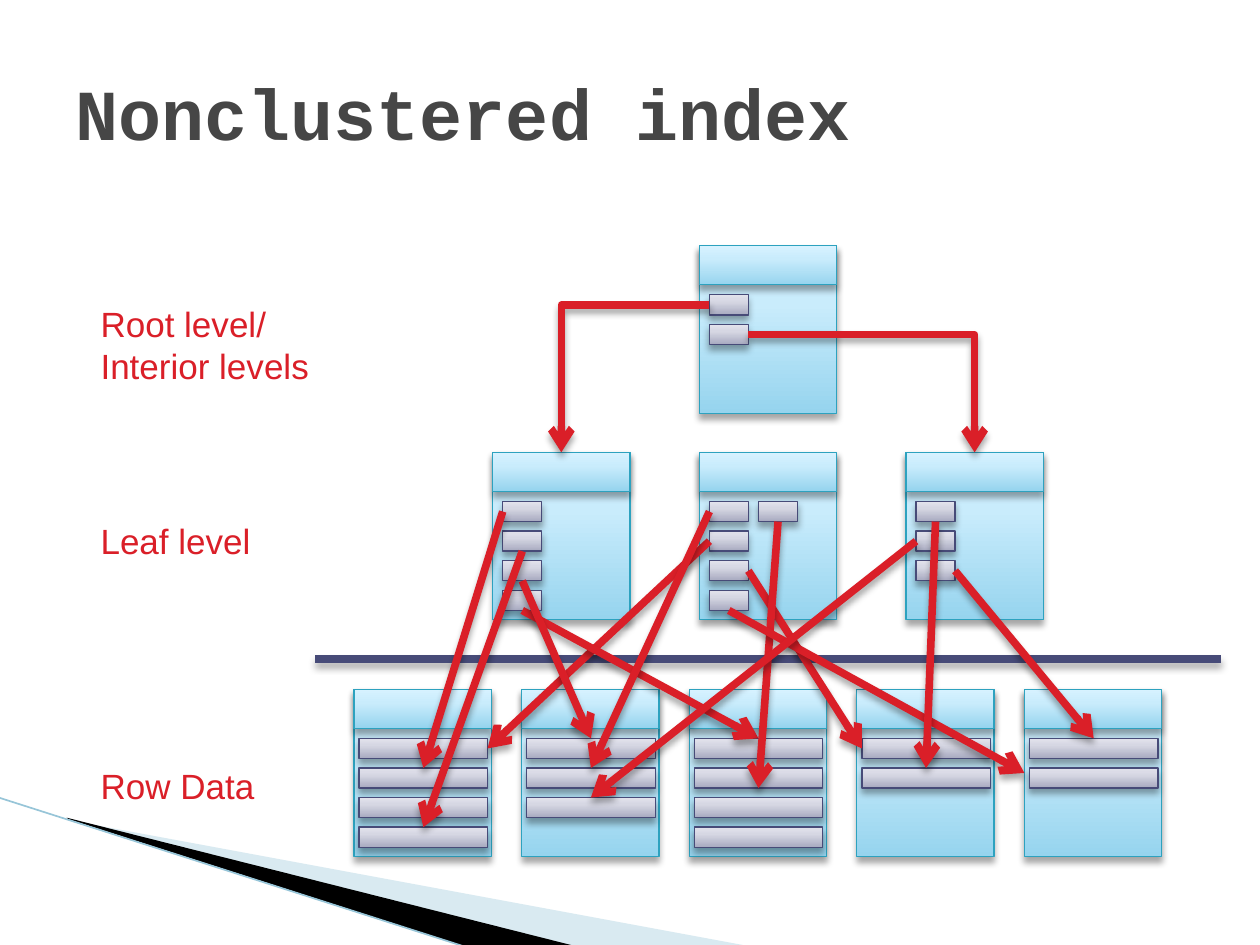
import copy

import pptx
import pptx.dml.color
import pptx.enum.shapes
import pptx.enum.text
import pptx.oxml
import pptx.oxml.ns
import pptx.util

COLORS = {
    "title": "464646", "red": "DA1F28", "navy": "474B78", "teal": "2DA2BF",
    "wedge": "A0CBDC", "black": "000000", "edge": "97C5D8",
}
PAGE_STOPS = [(0, "96D4EE"), (0.65, "C9ECFC"), (1, "D7F2FF")]
ENTRY_STOPS = [(0, "A8AAC0"), (0.65, "D6D7E3"), (1, "E2E2EC")]

# Content
TITLE = "Nonclustered index"
LABELS = [  # text, top, width, height
    ("Root level/\nInterior levels", 2.35, 1.87, 0.77),
    ("Leaf level", 4.07, 1.4, 0.44),
    ("Row Data", 6.02, 1.51, 0.44),
]
# Each level: left of first page, page pitch, top, entry inset, entry width, entries per page
LEVELS = {
    "data": (2.81, 1.33, 5.47, 0.04, 1.02, [4, 3, 4, 2, 2]),
    "leaf": (3.91, 1.64, 3.59, 0.08, 0.31, [4, 4, 3]),
    "root": (5.55, 1.64, 1.95, 0.08, 0.31, [2]),
}
PAGE_WIDTH, PAGE_HEIGHT, HEAD_HEIGHT = 1.09, 1.33, 0.31
FIRST_ENTRY, ENTRY_PITCH, ENTRY_HEIGHT = 0.39, 0.235, 0.16
EXTRA_ENTRY = ("leaf", 1, 4)  # stands to the right of the page's first entry

TOP, LEFT, BOTTOM, RIGHT = range(4)
ROOT_LINKS = [  # root entry, side, leaf page
    (0, LEFT, 0), (1, RIGHT, 2),
]
ROW_LINKS = [  # (leaf page, entry), side, (data page, row), side; row None is the page itself
    ((0, 0), LEFT, (0, 1), TOP), ((1, 1), LEFT, (0, 0), RIGHT),
    ((1, 2), RIGHT, (3, 0), LEFT), ((0, 3), BOTTOM, (2, 0), TOP),
    ((0, 2), BOTTOM, (1, 0), TOP), ((1, 4), BOTTOM, (2, 1), BOTTOM),
    ((0, 1), BOTTOM, (0, 3), TOP), ((1, 3), BOTTOM, (4, None), LEFT),
    ((2, 2), RIGHT, (4, 0), TOP), ((1, 0), LEFT, (1, 1), TOP),
    ((2, 1), LEFT, (1, 2), TOP), ((2, 0), BOTTOM, (3, 1), TOP),
]
WEDGES = [  # colour, opacity in percent, corners
    ("wedge", 40, [(0.55, 6.51), (5.95, 7.51), (4.56, 7.51), (0.55, 6.5)]),
    ("black", 100, [(0.53, 6.49), (4.57, 7.51), (3.72, 7.52), (0.54, 6.5)]),
]

Inches, Pt, qn = pptx.util.Inches, pptx.util.Pt, pptx.oxml.ns.qn
CONNECTOR = pptx.enum.shapes.MSO_CONNECTOR
RECTANGLE = pptx.enum.shapes.MSO_SHAPE.RECTANGLE
EFFECTS = '<a:effectLst %s/>' % pptx.oxml.ns.nsdecls("a")
SHADOW = (
    '<a:outerShdw %s blurRad="50800" dist="38100" dir="5400000" rotWithShape="0">'
    '<a:srgbClr val="000000"><a:alpha val="35000"/></a:srgbClr></a:outerShdw>'
    % pptx.oxml.ns.nsdecls("a")
)


def rgb(name):
    return pptx.dml.color.RGBColor.from_string(COLORS.get(name, name))


def add_box(shapes, left, top, width, height, stops, line):
    box = shapes.add_shape(RECTANGLE, *map(Inches, (left, top, width, height)))
    box.fill.gradient()
    stop_list = box._element.spPr.find(".//" + qn("a:gsLst"))
    stop_list.append(copy.deepcopy(stop_list[0]))
    for stop, (position, color) in zip(box.fill.gradient_stops, stops):
        stop.position = position
        stop.color.rgb = rgb(color)
    box.fill.gradient_angle = 90
    box.line.color.rgb = rgb(line)
    box.line.width = Pt(0.75)
    box.shadow.inherit = False
    box._element.spPr.find(qn("a:effectLst")).append(pptx.oxml.parse_xml(SHADOW))
    return box


def add_line(shapes, color, width, start=(0, 0), end=(0, 0), kind=CONNECTOR.STRAIGHT, shadow=True):
    line = shapes.add_connector(kind, *map(Inches, (*start, *end)))
    line.line.color.rgb = rgb(color)
    line.line.width = Pt(width)
    effects = pptx.oxml.parse_xml(EFFECTS)
    if shadow:
        effects.append(pptx.oxml.parse_xml(SHADOW))
    line._element.spPr.append(effects)
    return line


def add_arrow(shapes, source, source_side, target, target_side, kind=CONNECTOR.STRAIGHT):
    arrow = add_line(shapes, "red", 4.33, kind=kind)
    arrow.begin_connect(source, source_side)
    arrow.end_connect(target, target_side)
    if kind == CONNECTOR.ELBOW:
        arrow._element.spPr.find(qn("a:prstGeom")).set("prst", "bentConnector2")
    head = arrow.line._get_or_add_ln().makeelement(qn("a:tailEnd"), {"type": "arrow"})
    arrow.line._get_or_add_ln().append(head)


def add_decoration(shapes):
    for color, opacity, corners in WEDGES:
        points = [tuple(map(Inches, corner)) for corner in corners]
        builder = shapes.build_freeform(*points[0])
        builder.add_line_segments(points[1:], close=True)
        wedge = builder.convert_to_shape()
        wedge.fill.solid()
        wedge.fill.fore_color.rgb = rgb(color)
        wedge.line.fill.background()
        wedge.shadow.inherit = False
        if opacity < 100:
            value = wedge._element.spPr.find(".//" + qn("a:srgbClr"))
            value.append(value.makeelement(qn("a:alpha"), {"val": str(opacity * 1000)}))
    add_line(shapes, "edge", 0.95, (-0.01, 6.33), (3.71, 7.52), shadow=False)


def add_text(page):
    title = page.shapes.title
    title.left, title.top, title.width, title.height = map(Inches, (0.5, 0.39, 9, 1))
    title.text_frame.text = TITLE
    title.text_frame.vertical_anchor = pptx.enum.text.MSO_ANCHOR.MIDDLE
    para = title.text_frame.paragraphs[0]
    para.alignment = pptx.enum.text.PP_ALIGN.LEFT
    font = para.runs[0].font
    font.name, font.size, font.bold = "Courier New", Pt(41), True
    font.color.rgb = rgb("title")

    for text, top, width, height in LABELS:
        box = page.shapes.add_textbox(*map(Inches, (0.7, top, width, height)))
        box.text_frame.text = text
        box.text_frame.word_wrap = False
        box.text_frame.auto_size = pptx.enum.text.MSO_AUTO_SIZE.SHAPE_TO_FIT_TEXT
        for para in box.text_frame.paragraphs:
            font = para.runs[0].font
            font.name, font.size = "Arial", Pt(20)
            font.color.rgb = rgb("red")


def add_level(shapes, level, boxes):
    first_left, pitch, top, inset, width, counts = LEVELS[level]
    for column, count in enumerate(counts):
        left = first_left + column * pitch
        boxes[level, column, None] = add_box(
            shapes, left, top, PAGE_WIDTH, PAGE_HEIGHT, PAGE_STOPS, "teal")
        add_box(shapes, left, top, PAGE_WIDTH, HEAD_HEIGHT, PAGE_STOPS, "teal")
        spots = [(column, row, left + inset, row) for row in range(count)]
        if EXTRA_ENTRY[:2] == (level, column):
            spots.append((column, EXTRA_ENTRY[2], left + inset + 0.39, 0))
        for column, entry, entry_left, row in spots:
            entry_top = top + FIRST_ENTRY + row * ENTRY_PITCH
            boxes[level, column, entry] = add_box(
                shapes, entry_left, entry_top, width, ENTRY_HEIGHT, ENTRY_STOPS, "navy")


def main():
    deck = pptx.Presentation()
    deck.slide_width, deck.slide_height = Inches(10), Inches(7.5)
    page = deck.slides.add_slide(deck.slide_layouts[5])
    shapes = page.shapes
    add_decoration(shapes)
    add_text(page)

    # Divider between the index and the rows
    add_line(shapes, "navy", 4.33, (2.5, 5.23), (9.69, 5.23))

    # Pages and their entries
    boxes = {}
    for level in LEVELS:
        add_level(shapes, level, boxes)

    # Pointers from level to level
    for entry, side, leaf in ROOT_LINKS:
        add_arrow(shapes, boxes["root", 0, entry], side, boxes["leaf", leaf, None], TOP,
                  CONNECTOR.ELBOW)
    for source, source_side, target, target_side in ROW_LINKS:
        add_arrow(shapes, boxes[("leaf", *source)], source_side,
                  boxes[("data", *target)], target_side)
    deck.save("out.pptx")


if __name__ == "__main__":
    main()
